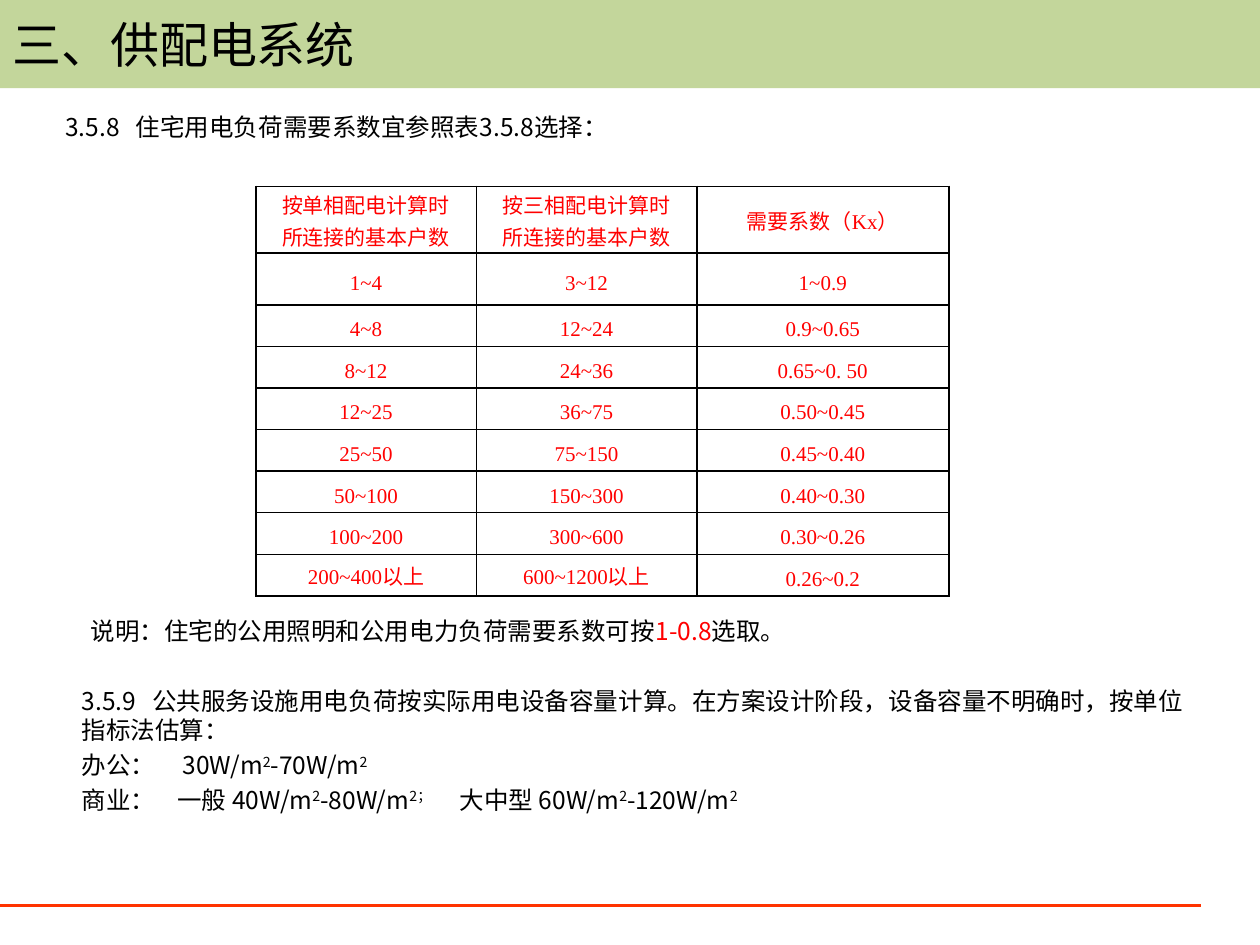
from dataclasses import dataclass

from lxml.etree import SubElement
from pptx import Presentation
from pptx.dml.color import RGBColor
from pptx.enum.shapes import MSO_CONNECTOR as Connector, MSO_SHAPE as Shape
from pptx.enum.text import MSO_ANCHOR as Anchor, PP_ALIGN as Align
from pptx.oxml.ns import qn
from pptx.util import Inches, Pt


@dataclass(frozen=True)
class Theme:
    """Colours, fonts and type sizes of the slide."""
    black: str = "000000"
    red: str = "FF0000"
    band: str = "C3D69B"
    rule: str = "FF3300"
    title_font: str = "Calibri"
    body_font: str = "Noto Sans CJK SC"
    table_font: str = "Times New Roman"
    title_size: float = 28
    body_size: float = 14
    table_size: float = 12
    body_leading: float = 17
    table_leading: float = 18


THEME = Theme()
SQUARED = ("2", {"baseline": 30})
HEADERS = ("按单相配电计算时\n所连接的基本户数", "按三相配电计算时\n所连接的基本户数", "需要系数（Kx）")
DEMAND_ROWS = (
    ("1~4", "3~12", "1~0.9"),
    ("4~8", "12~24", "0.9~0.65"),
    ("8~12", "24~36", "0.65~0. 50"),
    ("12~25", "36~75", "0.50~0.45"),
    ("25~50", "75~150", "0.45~0.40"),
    ("50~100", "150~300", "0.40~0.30"),
    ("100~200", "300~600", "0.30~0.26"),
    ("200~400以上", "600~1200以上", "0.26~0.2"),
)
COLUMN_WIDTHS = (1.75, 1.75, 2)
ROW_HEIGHTS = (0.53, 0.41) + (0.33,) * 7


def add_run(paragraph, text, *, font, size, color=THEME.black, baseline=0):
    """Append one formatted run to a paragraph."""
    run = paragraph.add_run()
    run.text = text
    run.font.size = Pt(size)
    run.font.color.rgb = RGBColor.from_string(color)
    run.font.name = font
    properties = run.font._element
    SubElement(properties, qn("a:ea"), typeface=THEME.body_font)
    if baseline:
        properties.set("baseline", str(baseline * 1000))


def set_tabs(paragraph, stops):
    """Place left tab stops, in inches, on a paragraph."""
    tab_list = SubElement(paragraph._p.get_or_add_pPr(), qn("a:tabLst"))
    for stop in stops:
        SubElement(tab_list, qn("a:tab"), pos=str(Inches(stop)), algn="l")


def write_text(frame, paragraphs, *, align=Align.LEFT, leading=None, before=0, tabs=(), **run_format):
    """Fill a text frame with paragraphs of plain strings or (text, format) runs."""
    for index, runs in enumerate(paragraphs):
        paragraph = frame.add_paragraph() if index else frame.paragraphs[0]
        paragraph.alignment = align
        paragraph.space_before = Pt(before)
        if leading:
            paragraph.line_spacing = Pt(leading)
        if tabs:
            set_tabs(paragraph, tabs[index])
        for run in runs:
            text, changes = (run, {}) if isinstance(run, str) else run
            add_run(paragraph, text, **{**run_format, **changes})


def add_title(slide, text):
    """Add the coloured title band."""
    band = slide.shapes.add_shape(Shape.RECTANGLE, 0, 0, Inches(10), Inches(0.7))
    band.shadow.inherit = False
    band.fill.solid()
    band.fill.fore_color.rgb = RGBColor.from_string(THEME.band)
    band.line.fill.background()
    band.text_frame.vertical_anchor = Anchor.MIDDLE
    write_text(band.text_frame, [[text]], font=THEME.title_font, size=THEME.title_size)


def add_body(slide, left, top, height, paragraphs, tabs=()):
    """Add a wrapped body text box."""
    box = slide.shapes.add_textbox(Inches(left), Inches(top), Inches(9), Inches(height))
    box.text_frame.word_wrap = True
    write_text(box.text_frame, paragraphs, font=THEME.body_font, size=THEME.body_size,
               leading=THEME.body_leading, before=THEME.body_size * 0.2, tabs=tabs)


def add_rule(slide):
    """Add the line at the foot of the slide."""
    height = Inches(7.19)
    rule = slide.shapes.add_connector(Connector.STRAIGHT, 0, height, Inches(9.53), height)
    rule.line.color.rgb = RGBColor.from_string(THEME.rule)
    rule.line.width = Pt(1.75)
    SubElement(rule._element.spPr, qn("a:effectLst"))


def style_cell(cell):
    """Give a cell black borders, no fill and narrow margins."""
    properties = cell._tc.get_or_add_tcPr()
    for side in ("lnL", "lnR", "lnT", "lnB"):
        border = SubElement(properties, qn(f"a:{side}"), w=str(Pt(1)))
        fill = SubElement(border, qn("a:solidFill"))
        SubElement(fill, qn("a:srgbClr"), val=THEME.black)
    cell.fill.background()
    cell.vertical_anchor = Anchor.MIDDLE
    cell.margin_left = cell.margin_right = Inches(0.07)
    cell.margin_top = cell.margin_bottom = 0


def add_demand_table(slide):
    """Add the table of demand factors."""
    rows = (HEADERS, *DEMAND_ROWS)
    table = slide.shapes.add_table(len(rows), len(HEADERS), Inches(2.03), Inches(1.48),
                                   Inches(sum(COLUMN_WIDTHS)), Inches(sum(ROW_HEIGHTS))).table
    table.first_row = table.horz_banding = False
    for column, width in zip(table.columns, COLUMN_WIDTHS):
        column.width = Inches(width)
    for row, height, texts in zip(table.rows, ROW_HEIGHTS, rows):
        row.height = Inches(height)
        for cell, text in zip(row.cells, texts):
            style_cell(cell)
            write_text(cell.text_frame, [[line] for line in text.split("\n")], align=Align.CENTER,
                       leading=THEME.table_leading, font=THEME.table_font,
                       size=THEME.table_size, color=THEME.red)


def main():
    """Build and save the slide."""
    presentation = Presentation()
    presentation.slide_width, presentation.slide_height = Inches(10), Inches(7.5)
    slide = presentation.slides.add_slide(presentation.slide_layouts[6])
    add_rule(slide)
    add_title(slide, "三、供配电系统")
    add_body(slide, 0.42, 0.84, 0.67, [["3.5.8\t住宅用电负荷需要系数宜参照表3.5.8选择："]], tabs=[(0.56,)])
    add_body(slide, 0.62, 4.84, 0.47, [[
        "说明：住宅的公用照明和公用电力负荷需要系数可按", ("1-0.8", {"color": THEME.red}), "选取。"]])
    add_demand_table(slide)
    add_body(slide, 0.55, 5.39, 1.68, [
        ["3.5.9\t公共服务设施用电负荷按实际用电设备容量计算。在方案设计阶段，设备容量不明确时，按单位指标法估算："],
        ["办公：\t30W/m", SQUARED, "-70W/m", SQUARED],
        ["商业：\t一般 40W/m", SQUARED, "-80W/m", ("2；", SQUARED[1]),
         "\t大中型 60W/m", SQUARED, "-120W/m", SQUARED],
    ], tabs=[(0.56,), (0.8,), (0.76, 3)])
    presentation.save("out.pptx")


if __name__ == "__main__":
    main()
